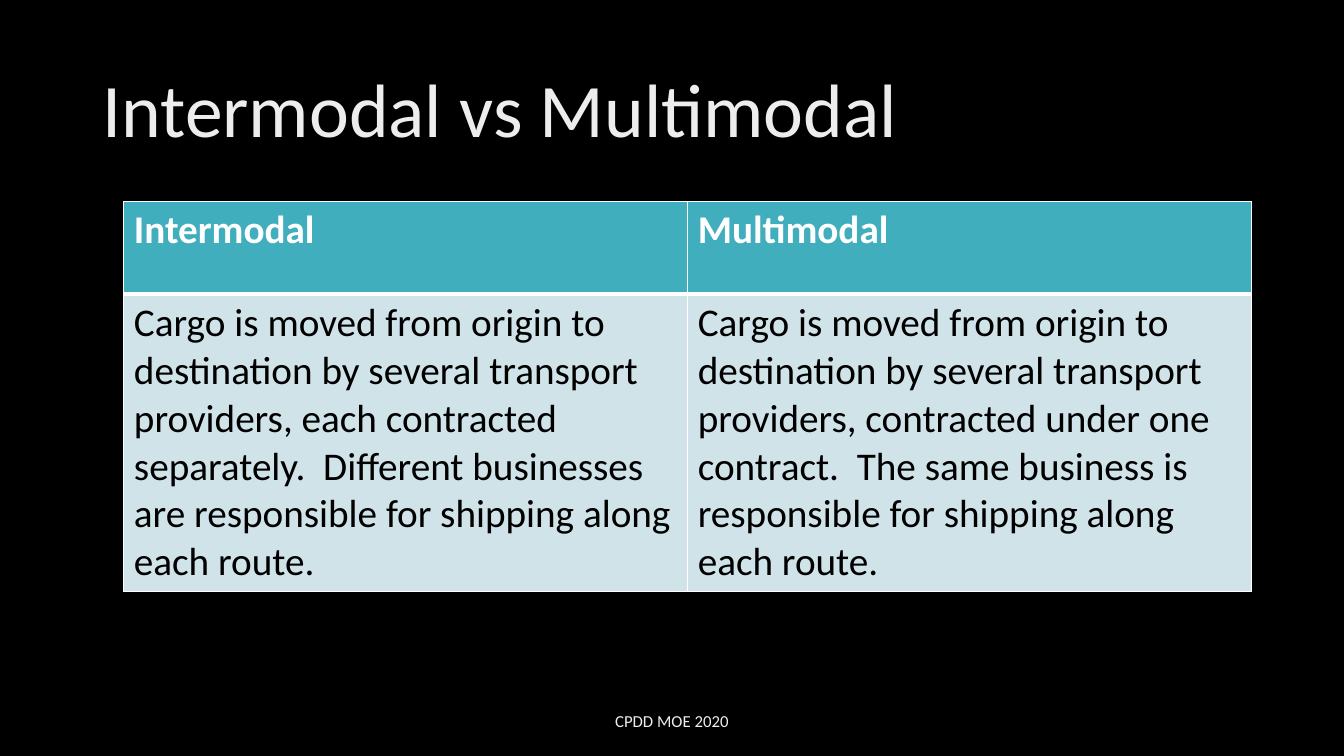
"""Build the slide that compares intermodal and multimodal transport."""
from dataclasses import dataclass

from lxml import etree
from pptx import Presentation
from pptx.dml.color import RGBColor
from pptx.enum.text import MSO_ANCHOR, MSO_AUTO_SIZE, PP_ALIGN
from pptx.oxml.ns import qn
from pptx.util import Pt

PX = 9525
LEFT, CENTER = PP_ALIGN.LEFT, PP_ALIGN.CENTER
MIDDLE = MSO_ANCHOR.MIDDLE
FIXED = MSO_AUTO_SIZE.NONE


@dataclass(frozen=True)
class Theme:
    font: str = "Calibri"
    back: str = "000000"
    light: str = "EDEDED"
    white: str = "FFFFFF"
    black: str = "000000"
    head: str = "41AEBD"
    body: str = "CFE3E8"
    title: int = 54
    cell: int = 28
    foot: int = 12


theme = Theme()


def write(frame, text, size, color, bold=False, align=LEFT):
    frame.word_wrap = True
    para = frame.paragraphs[0]
    para.alignment = align
    run = para.add_run()
    run.text = text
    run.font.name = theme.font
    run.font.size = Pt(size)
    run.font.bold = bold
    run.font.color.rgb = RGBColor.from_string(color)
    return para


def edge(cell, side, width):
    line = etree.SubElement(cell._tc.get_or_add_tcPr(), qn(f"a:ln{side}"), w=str(Pt(width)))
    fill = etree.SubElement(line, qn("a:solidFill"))
    etree.SubElement(fill, qn("a:srgbClr"), val=theme.white)


deck = Presentation()
deck.slide_width, deck.slide_height = 1280 * PX, 720 * PX
slide = deck.slides.add_slide(deck.slide_layouts[5])
slide.background.fill.solid()
slide.background.fill.fore_color.rgb = RGBColor.from_string(theme.back)

title = slide.shapes.title
title.left, title.top, title.width, title.height = 88 * PX, 38 * PX, 1104 * PX, 139 * PX
title.text_frame.auto_size = FIXED
title.text_frame.vertical_anchor = MIDDLE
para = write(title.text_frame, "Intermodal vs Multimodal", theme.title, theme.light)
para.line_spacing = 0.9

rows = [
    ("Intermodal", "Multimodal"),
    (
        "Cargo is moved from origin to destination by several transport providers, "
        "each contracted separately.  Different businesses are responsible for "
        "shipping along each route.",
        "Cargo is moved from origin to destination by several transport providers, "
        "contracted under one contract.  The same business is responsible for "
        "shipping along each route.",
    ),
]
styles = [
    (88, theme.head, theme.white, True, {"L": 1, "R": 1, "T": 1, "B": 3}),
    (283, theme.body, theme.black, False, {"L": 1, "R": 1, "T": 3, "B": 1}),
]
table = slide.shapes.add_table(2, 2, 118 * PX, 192 * PX, 1074 * PX, 371 * PX).table
for r, (texts, style) in enumerate(zip(rows, styles)):
    height, fill, color, bold, edges = style
    table.rows[r].height = height * PX
    for c, text in enumerate(texts):
        cell = table.cell(r, c)
        for side, width in edges.items():
            edge(cell, side, width)
        cell.fill.solid()
        cell.fill.fore_color.rgb = RGBColor.from_string(fill)
        write(cell.text_frame, text, theme.cell, color, bold)

foot = slide.shapes.add_textbox(424 * PX, 667 * PX, 432 * PX, 38 * PX)
foot.text_frame.vertical_anchor = MIDDLE
write(foot.text_frame, "CPDD MOE 2020", theme.foot, theme.light, align=CENTER)

deck.save("out.pptx")
